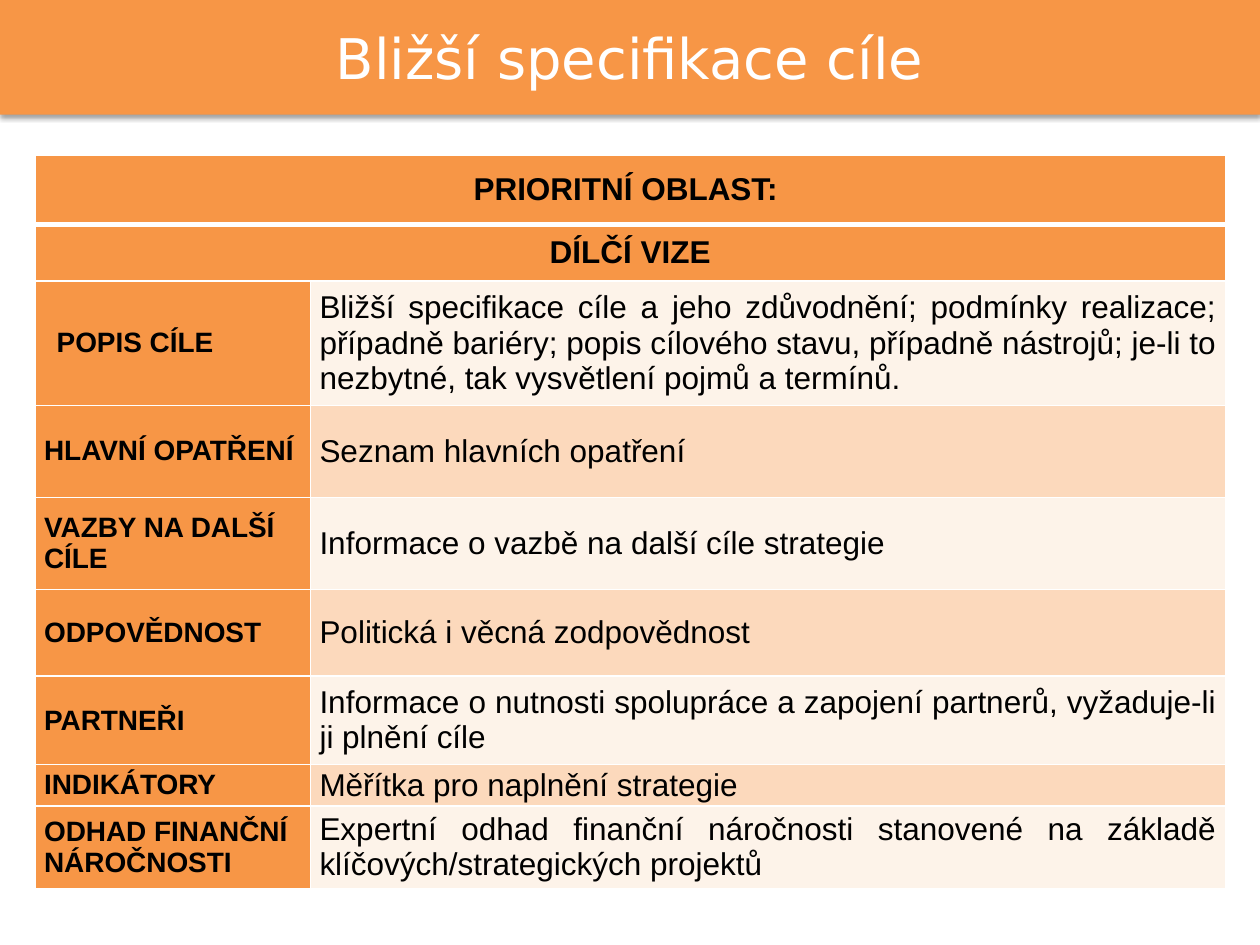
import pptx
import pptx.util
import pptx.dml.color
import pptx.enum.text
import pptx.oxml
import pptx.oxml.ns

Pt = pptx.util.Pt
ALIGN = pptx.enum.text.PP_ALIGN
MIDDLE = pptx.enum.text.MSO_ANCHOR.MIDDLE

COLORS = {"main": "F79646", "light": "FDF3E9", "dark": "FCD9BC",
          "white": "FFFFFF", "black": "000000"}
TITLE = "Bližší specifikace cíle"
HEADS = [("PRIORITNÍ OBLAST: ", 39.6), ("DÍLČÍ VIZE", 32.4)]
# label, text, row height
ROWS = [
    ("POPIS CÍLE",
     "Bližší specifikace cíle a jeho zdůvodnění; podmínky realizace; případně "
     "bariéry; popis cílového stavu, případně nástrojů; je-li to nezbytné, tak "
     "vysvětlení pojmů a termínů.", 71),
    ("HLAVNÍ OPATŘENÍ", "Seznam hlavních opatření", 52.6),
    ("VAZBY NA DALŠÍ CÍLE", "Informace o vazbě na další cíle strategie", 52.6),
    ("ODPOVĚDNOST", "Politická i věcná zodpovědnost", 49.6),
    ("PARTNEŘI",
     "Informace o nutnosti spolupráce a zapojení partnerů, vyžaduje-li ji "
     "plnění cíle", 50.6),
    ("INDIKÁTORY", "Měřítka pro naplnění strategie", 23.6),
    ("ODHAD FINANČNÍ NÁROČNOSTI",
     "Expertní odhad finanční náročnosti stanovené na základě "
     "klíčových/strategických projektů", 47.2),
]
WIDTHS = [157.4, 522.8]
LEFT, TOP = 20, 88.6
NS = pptx.oxml.ns.nsdecls("a")


def paint(fill, name):
    fill.solid()
    fill.fore_color.rgb = pptx.dml.color.RGBColor.from_string(COLORS[name])


def style(par, size, color, face="Arial", bold=False, align=ALIGN.LEFT):
    par.alignment = align
    par.font.size, par.font.name, par.font.bold = Pt(size), face, bold
    paint(par.font.fill, color)


def edge(cell, top, bottom):
    """Draw white borders; top and bottom are widths in points."""
    props = cell._tc.get_or_add_tcPr()
    for side, width in zip("LRTB", (1, 1, top, bottom)):
        props.append(pptx.oxml.parse_xml(
            f'<a:ln{side} {NS} w="{Pt(width)}"><a:solidFill>'
            f'<a:srgbClr val="{COLORS["white"]}"/></a:solidFill></a:ln{side}>'))


def write(cell, text, size, color, bold, align):
    cell.text = text
    par = cell.text_frame.paragraphs[0]
    style(par, size, "black", bold=bold, align=align)
    paint(cell.fill, color)
    return par


def add_title(slide):
    title = slide.shapes.title
    title.left, title.top, title.width, title.height = 0, 0, Pt(720), Pt(65.6)
    paint(title.fill, "main")
    title._element.spPr.append(pptx.oxml.parse_xml(
        f'<a:effectLst {NS}><a:outerShdw blurRad="{Pt(3.1)}" dist="{Pt(1.6)}" '
        f'dir="5400000" rotWithShape="0"><a:srgbClr val="{COLORS["black"]}">'
        '<a:alpha val="38000"/></a:srgbClr></a:outerShdw></a:effectLst>'))
    title.text_frame.text = TITLE
    title.text_frame.vertical_anchor = MIDDLE
    style(title.text_frame.paragraphs[0], 32, "white", "DejaVu Sans",
          align=ALIGN.CENTER)


def add_grid(slide):
    highs = [head[-1] for head in HEADS] + [row[-1] for row in ROWS]
    grid = slide.shapes.add_table(len(highs), len(WIDTHS), Pt(LEFT), Pt(TOP),
                                  Pt(sum(WIDTHS)), Pt(sum(highs))).table
    for col, width in zip(grid.columns, WIDTHS):
        col.width = Pt(width)
    for i, high in enumerate(highs):
        grid.rows[i].height = Pt(high)
        for cell in grid.rows[i].cells:
            cell.margin_left = cell.margin_right = Pt(5.2)
            cell.margin_top = cell.margin_bottom = 0
            cell.vertical_anchor = MIDDLE
            edge(cell, 3 if i == 1 else 1, 3 if i == 0 else 1)

    for i, (text, _) in enumerate(HEADS):
        grid.cell(i, 0).merge(grid.cell(i, 1))
        write(grid.cell(i, 0), text, 18, "main", True, ALIGN.CENTER)
    for i, (label, text, _) in enumerate(ROWS):
        row = i + len(HEADS)
        name = write(grid.cell(row, 0), label, 16, "main", True, ALIGN.LEFT)
        body = write(grid.cell(row, 1), text, 18, ("light", "dark")[i % 2],
                     False, ALIGN.JUSTIFY)
        if i == 0:
            name._p.get_or_add_pPr().set("marL", str(Pt(7.2)))
            body.space_before = Pt(6)


def main():
    deck = pptx.Presentation()
    deck.slide_width, deck.slide_height = Pt(720), Pt(540)
    slide = deck.slides.add_slide(deck.slide_layouts[5])
    add_title(slide)
    add_grid(slide)
    deck.save("out.pptx")


if __name__ == "__main__":
    main()
